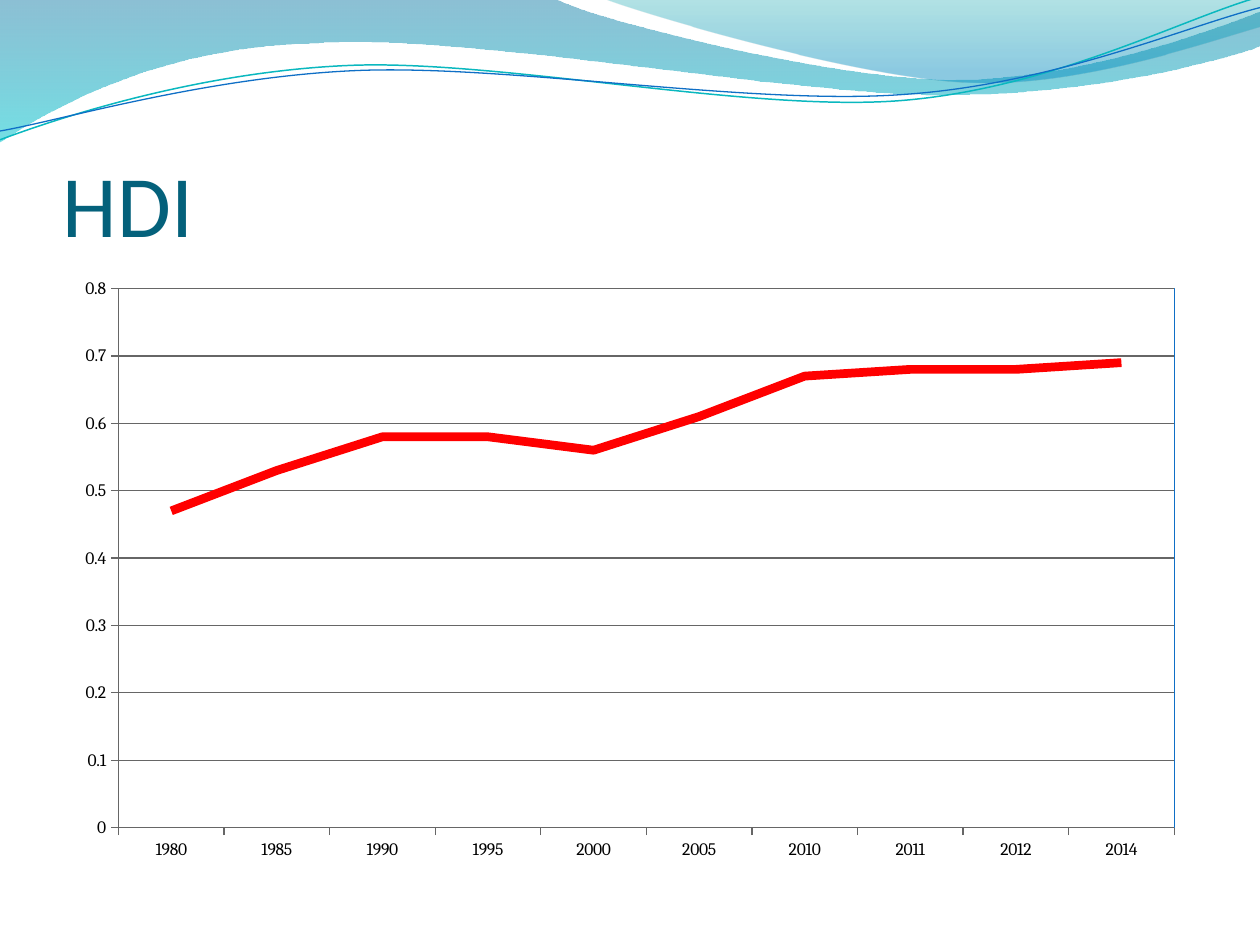
from math import cos, radians, sin

from lxml.etree import SubElement
from pptx import Presentation
from pptx.chart.data import CategoryChartData
from pptx.dml.color import RGBColor
from pptx.enum.chart import XL_CHART_TYPE as ChartType, XL_TICK_MARK as Tick
from pptx.enum.text import MSO_ANCHOR as Anchor
from pptx.oxml import parse_xml
from pptx.oxml.ns import nsdecls, qn
from pptx.util import Inches, Pt

COLORS = {
    "title": "04617B", "text": "000000", "trend": "FF0000", "axis": "666666",
    "blue": "0F6FC6", "teal": "0AB8BF",
    "wave_top": "0074A1", "wave_base": "00C6CF",
    "crest_top": "00A1A9", "crest_base": "008BBF",
}
HDI = {
    "1980": 0.47, "1985": 0.53, "1990": 0.58, "1995": 0.58, "2000": 0.56,
    "2005": 0.61, "2010": 0.67, "2011": 0.68, "2012": 0.68, "2014": 0.69,
}
WAVE = [
    (0, 0), [(4.4, -0.01)],
    [(4.76, 0.17), (6.64, 0.63), (7.58, 0.63)],
    [(8.53, 0.63), (9.58, 0.26), (10, 0.09)], [(10.01, 0.36)],
    [(9.83, 0.44), (8.7, 0.76), (7.46, 0.75)],
    [(6.22, 0.75), (3.82, 0.28), (2.57, 0.34)],
    [(1.29, 0.36), (0.46, 0.83), (-0.01, 1.13)], [(0, 0)],
]
CREST = [
    (4.79, -0.01),
    [(5.09, 0.11), (6.82, 0.62), (7.69, 0.65)],
    [(8.56, 0.69), (9.61, 0.32), (10, 0.21)], [(10, 0)], [(4.79, -0.01)],
]
TEAL_LINE = [
    (0, 1.11),
    [(0.48, 0.93), (1.58, 0.57), (2.77, 0.52)],
    [(3.95, 0.47), (5.93, 0.89), (7.13, 0.8)],
    [(8.33, 0.71), (9.38, 0.15), (9.98, -0.02)],
]
BLUE_LINE = [
    (0, 1.04),
    [(0.47, 0.96), (1.64, 0.61), (2.83, 0.56)],
    [(4.03, 0.51), (5.97, 0.84), (7.17, 0.75)],
    [(8.36, 0.67), (9.41, 0.21), (10, 0.06)],
]


def rgb(name):
    """Return the named palette colour."""
    return RGBColor.from_string(COLORS[name])


def add_curve(slide, box, outline, close, tilt=0):
    """Draw straight and cubic segments in a box turned by tilt degrees."""
    left, top, width, height = box
    turn = radians(-tilt)

    def local(point):
        """Turn a point back about the box centre and measure from its corner."""
        dx, dy = point[0] - left - width / 2, point[1] - top - height / 2
        return (Inches(dx * cos(turn) - dy * sin(turn) + width / 2),
                Inches(dx * sin(turn) + dy * cos(turn) + height / 2))

    builder = slide.shapes.build_freeform(*local(outline[0]))
    builder.add_line_segments([local(part[-1]) for part in outline[1:]], close=close)
    curve = builder.convert_to_shape()
    curve.left, curve.top, curve.width, curve.height = map(Inches, box)
    curve.rotation = tilt
    curve.shadow.inherit = False

    track = next(curve._element.iter(qn("a:path")))
    track.set("w", str(curve.width))
    track.set("h", str(curve.height))
    for step, part in zip(list(track), [outline[:1], *outline[1:]]):
        if len(part) == 3:
            bend = SubElement(track, qn("a:cubicBezTo"))
            track.replace(step, bend)
            step = bend
        for old in list(step):
            step.remove(old)
        for point in part:
            x, y = local(point)
            SubElement(step, qn("a:pt"), x=str(x), y=str(y))
    return curve


def add_band(slide, box, outline, stops):
    """Draw a closed band with a translucent vertical gradient."""
    band = add_curve(slide, box, outline, True)
    band.line.fill.background()
    band.fill.gradient()
    band.fill.gradient_angle = 270
    for stop, (position, color, _) in zip(band.fill.gradient_stops, stops):
        stop.position = position
        stop.color.rgb = rgb(color)
    for tint, (_, _, opacity) in zip(band._element.spPr.iter(qn("a:srgbClr")), stops):
        SubElement(tint, qn("a:alpha"), val=str(opacity * 1000))


def add_ripple(slide, box, outline, color, width):
    """Draw a thin open line, slightly tilted."""
    ripple = add_curve(slide, box, outline, False, 357.3)
    ripple.fill.background()
    ripple.line.color.rgb = rgb(color)
    ripple.line.width = Pt(width)


def add_waves(slide):
    """Draw the wave header: two bands and two thin lines."""
    add_band(slide, (-0.01, -0.01, 10.02, 1.14), WAVE,
             [(0, "wave_top", 45), (1, "wave_base", 55)])
    add_band(slide, (4.79, -0.01, 5.21, 0.7), CREST,
             [(0, "crest_top", 30), (0.8, "crest_base", 45)])
    add_ripple(slide, (-0.02, 0.22, 10.02, 0.71), TEAL_LINE, "teal", 0.85)
    add_ripple(slide, (-0.02, 0.3, 10.03, 0.58), BLUE_LINE, "blue", 0.75)


def add_title(slide, left, top, width, height):
    """Place the slide title at the bottom of its box."""
    frame = slide.shapes.add_textbox(left, top, width, height).text_frame
    frame.word_wrap = True
    frame.vertical_anchor = Anchor.BOTTOM
    frame.margin_left = frame.margin_right = frame.margin_bottom = 0
    frame.margin_top = Inches(0.05)
    frame.text = "HDI"
    font = frame.paragraphs[0].runs[0].font
    font.name, font.size = "Calibri", Pt(50)
    font.color.rgb = rgb("title")


def frame_plot(chart, width, height):
    """Fix the inner plot area and give it a thin border."""
    plot_area = chart._chartSpace.chart.plotArea
    for layout in plot_area.findall(qn("c:layout")):
        plot_area.remove(layout)
    places = "".join(
        f'<c:{tag} val="{value}"/>' for tag, value in (
            ("layoutTarget", "inner"), ("xMode", "edge"), ("yMode", "edge"),
            ("x", Inches(0.44) / width), ("y", Inches(0.17) / height),
            ("w", Inches(8.38) / width), ("h", Inches(4.28) / height),
        )
    )
    plot_area.insert(0, parse_xml(
        f'<c:layout {nsdecls("c")}><c:manualLayout>{places}</c:manualLayout></c:layout>'
    ))
    plot_area.append(parse_xml(
        f'<c:spPr {nsdecls("c", "a")}><a:noFill/><a:ln w="9525"><a:solidFill>'
        f'<a:srgbClr val="{COLORS["blue"]}"/></a:solidFill></a:ln></c:spPr>'
    ))


def add_hdi_chart(slide, left, top, width, height):
    """Place the line chart of the index by year."""
    data = CategoryChartData()
    data.categories = list(HDI)
    data.add_series("Series 1", list(HDI.values()))
    chart = slide.shapes.add_chart(ChartType.LINE, left, top, width, height, data).chart
    chart.has_title = chart.has_legend = False
    chart.font.name, chart.font.size = "Cambria", Pt(10)
    chart.font.color.rgb = rgb("text")

    years, index = chart.category_axis, chart.value_axis
    index.minimum_scale, index.maximum_scale, index.major_unit = 0, 0.8, 0.1
    index.has_major_gridlines = True
    for axis in (years, index):
        axis.major_tick_mark, axis.minor_tick_mark = Tick.OUTSIDE, Tick.NONE
    for rule in (years.format.line, index.format.line, index.major_gridlines.format.line):
        rule.color.rgb = rgb("axis")
        rule.width = Pt(0.75)

    chart.plots[0].vary_by_categories = False
    trend = chart.plots[0].series[0]
    trend.smooth = False
    trend.format.line.color.rgb = rgb("trend")
    trend.format.line.width = Pt(5)
    frame_plot(chart, width, height)


def main():
    """Build and save the slide."""
    deck = Presentation()
    deck.slide_width, deck.slide_height = Inches(10), Inches(7.5)
    slide = deck.slides.add_slide(deck.slide_layouts[6])
    add_waves(slide)
    add_title(slide, Inches(0.5), Inches(0.77), Inches(9), Inches(1.25))
    add_hdi_chart(slide, Inches(0.5), Inches(2.12), Inches(9), Inches(4.8))
    deck.save("out.pptx")


if __name__ == "__main__":
    main()
